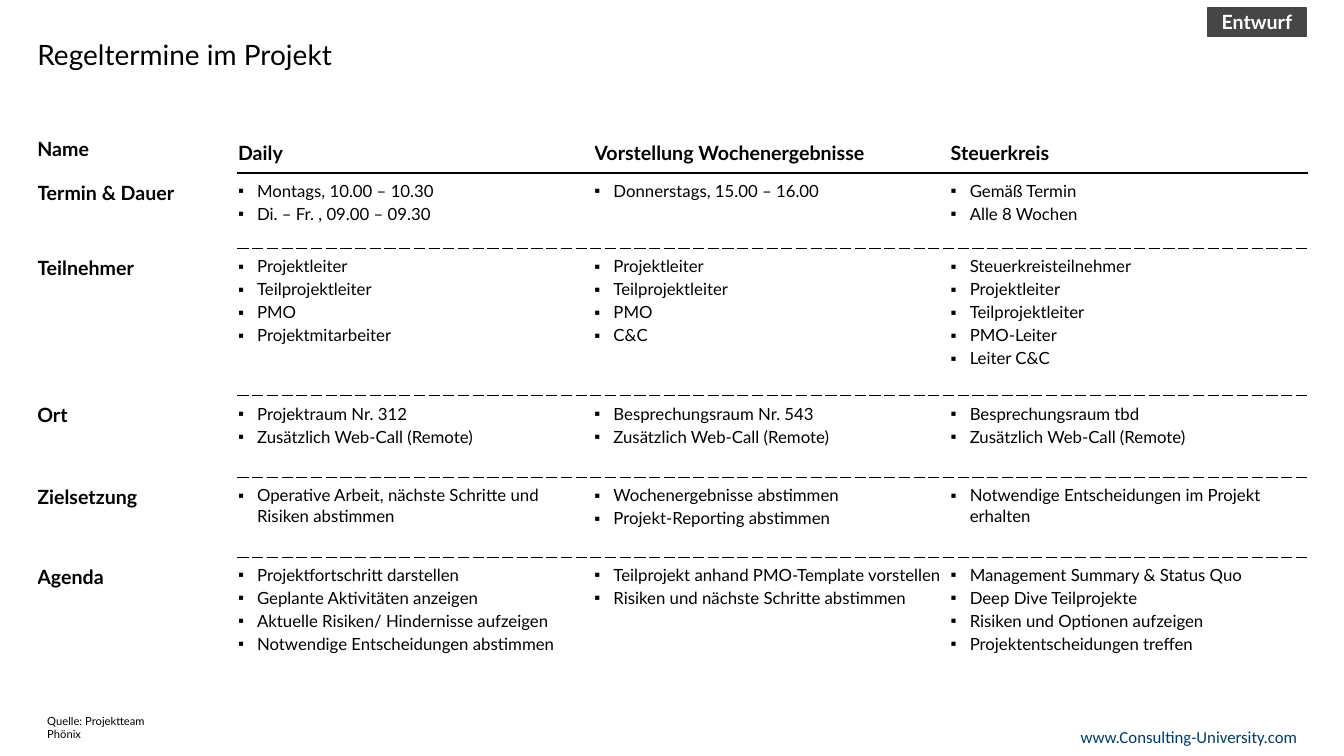
from lxml.etree import SubElement
from pptx import Presentation
from pptx.dml.color import RGBColor
from pptx.enum.shapes import MSO_SHAPE as Shape
from pptx.enum.text import MSO_ANCHOR as Anchor, MSO_AUTO_SIZE as AutoSize, PP_ALIGN as Align
from pptx.oxml import parse_xml
from pptx.oxml.ns import nsdecls, qn
from pptx.util import Cm, Pt

BLACK = RGBColor(0x00, 0x00, 0x00)
WHITE = RGBColor(0xFF, 0xFF, 0xFF)
GREY = RGBColor(0x46, 0x46, 0x46)
NAVY = RGBColor(0x00, 0x3D, 0x66)

HEADING = {"name": "Lato", "size": Pt(14), "bold": True}
BODY = {"name": "Lato", "size": Pt(12), "bold": False}
CELL = {"margin_left": 0, "margin_top": Cm(0.2), "margin_right": Cm(0.15),
        "margin_bottom": Cm(0.1)}
COLUMN_WIDTHS = (5.06, 8.98, 8.98, 8.98)
ROW_HEIGHTS = (1.11, 1.9, 3.71, 2.06, 2.01, 3.51)

MEETINGS = ("Name", "Daily", "Vorstellung Wochenergebnisse", "Steuerkreis")
TOPICS = (
    ("Termin & Dauer",
     ("Montags, 10.00 – 10.30", "Di. – Fr. , 09.00 – 09.30"),
     ("Donnerstags, 15.00 – 16.00",),
     ("Gemäß Termin", "Alle 8 Wochen")),
    ("Teilnehmer",
     ("Projektleiter", "Teilprojektleiter", "PMO", "Projektmitarbeiter"),
     ("Projektleiter", "Teilprojektleiter", "PMO", "C&C"),
     ("Steuerkreisteilnehmer", "Projektleiter", "Teilprojektleiter", "PMO-Leiter",
      "Leiter C&C")),
    ("Ort",
     ("Projektraum Nr. 312", "Zusätzlich Web-Call (Remote)"),
     ("Besprechungsraum Nr. 543", "Zusätzlich Web-Call (Remote)"),
     ("Besprechungsraum tbd", "Zusätzlich Web-Call (Remote)")),
    ("Zielsetzung",
     ("Operative Arbeit, nächste Schritte und Risiken abstimmen",),
     ("Wochenergebnisse abstimmen", "Projekt-Reporting abstimmen"),
     ("Notwendige Entscheidungen im Projekt erhalten",)),
    ("Agenda",
     ("Projektfortschritt darstellen", "Geplante Aktivitäten anzeigen",
      "Aktuelle Risiken/ Hindernisse aufzeigen", "Notwendige Entscheidungen abstimmen"),
     ("Teilprojekt anhand PMO-Template vorstellen",
      "Risiken und nächste Schritte abstimmen"),
     ("Management Summary & Status Quo", "Deep Dive Teilprojekte",
      "Risiken und Optionen aufzeigen", "Projektentscheidungen treffen")),
)


def apply(target, values):
    """Set every attribute named in values on target."""
    for name, value in values.items():
        setattr(target, name, value)


def write(para, text, style, color):
    """Add text to a paragraph in the given style and color."""
    span = para.add_run()
    span.text = text
    apply(span.font, style)
    span.font.color.rgb = color


def place(shape, box):
    """Move a shape to a box of left, top, width and height in centimetres."""
    apply(shape, dict(zip(("left", "top", "width", "height"), map(Cm, box))))


def add_bullet(para):
    """Give a paragraph a hanging square bullet."""
    props = para._p.get_or_add_pPr()
    props.set("marL", str(Cm(0.48)))
    props.set("indent", str(-Cm(0.48)))
    SubElement(props, qn("a:buFont")).set("typeface", "Arial")
    SubElement(props, qn("a:buChar")).set("char", "▪")


def add_borders(cell, top, bottom):
    """Draw top and bottom cell borders, each a pair of color and dash."""
    props = cell._tc.get_or_add_tcPr()
    for position, (tag, (color, dash)) in enumerate((("lnT", top), ("lnB", bottom))):
        props.insert(position, parse_xml(
            f'<a:{tag} {nsdecls("a")} w="{Pt(1)}"><a:solidFill><a:srgbClr val="{color}"/>'
            f'</a:solidFill><a:prstDash val="{dash}"/></a:{tag}>'))


def fill_cell(cell, content, top, bottom):
    """Fill a cell with a heading string or a tuple of bullets."""
    apply(cell, CELL)
    cell.fill.solid()
    cell.fill.fore_color.rgb = WHITE
    add_borders(cell, top, bottom)
    frame = cell.text_frame
    if isinstance(content, str):
        write(frame.paragraphs[0], content, HEADING, BLACK)
        return
    for index, item in enumerate(content):
        para = frame.add_paragraph() if index else frame.paragraphs[0]
        add_bullet(para)
        para.space_before = Pt(2 if index else 0)
        write(para, item, BODY, BLACK)


def add_schedule(page, box):
    """Add the table of regular meetings."""
    rows = (MEETINGS, *TOPICS)
    table = page.shapes.add_table(len(rows), len(MEETINGS), *map(Cm, box)).table
    apply(table, {"first_row": False, "horz_banding": False})
    for column, width in zip(table.columns, COLUMN_WIDTHS):
        column.width = Cm(width)
    for row, height in zip(table.rows, ROW_HEIGHTS):
        row.height = Cm(height)
    blank, solid, dashed = (WHITE, "solid"), (BLACK, "solid"), (BLACK, "sysDash")
    rules = (blank, solid, *[dashed] * (len(rows) - 2), blank)
    for r, contents in enumerate(rows):
        for c, content in enumerate(contents):
            cell = table.cell(r, c)
            top, bottom = (rules[r], rules[r + 1]) if c else (blank, blank)
            fill_cell(cell, content, top, bottom)
            if r == 0 and c:
                cell.vertical_anchor = Anchor.MIDDLE


def add_title(page, box):
    """Place and format the title."""
    title = page.shapes.title
    place(title, box)
    frame = title.text_frame
    apply(frame, {"margin_left": 0, "margin_right": 0, "word_wrap": True,
                  "vertical_anchor": Anchor.TOP, "auto_size": AutoSize.NONE})
    para = frame.paragraphs[0]
    apply(para, {"alignment": Align.LEFT, "line_spacing": 0.9})
    write(para, "Regeltermine im Projekt", {"name": "Lato", "size": Pt(20)}, BLACK)


def add_status(page, box):
    """Add the draft tag."""
    tag = page.shapes.add_shape(Shape.RECTANGLE, *map(Cm, box))
    tag.shadow.inherit = False
    tag.fill.solid()
    tag.fill.fore_color.rgb = GREY
    tag.line.color.rgb = GREY
    tag.line.width = Pt(1)
    apply(tag.text_frame, {"vertical_anchor": Anchor.MIDDLE, "word_wrap": True})
    para = tag.text_frame.paragraphs[0]
    para.alignment = Align.CENTER
    write(para, "Entwurf", HEADING, WHITE)


def add_note(page, box, text, style, color, layout, alignment):
    """Add a line of footer text."""
    frame = page.shapes.add_textbox(*map(Cm, box)).text_frame
    apply(frame, layout)
    para = frame.paragraphs[0]
    para.alignment = alignment
    write(para, text, style, color)


def main():
    """Build the slide and save it."""
    deck = Presentation()
    apply(deck, {"slide_width": Cm(33.87), "slide_height": Cm(19.05)})
    page = deck.slides.add_slide(deck.slide_layouts[5])
    add_note(page, (24.31, 18.19, 8.64, 0.76), "www.Consulting-University.com",
             {"name": "Calibri", "size": Pt(12)}, NAVY,
             {"word_wrap": False, "vertical_anchor": Anchor.MIDDLE}, Align.RIGHT)
    add_title(page, (0.94, 0.91, 32, 1.5))
    add_schedule(page, (0.94, 3.25, 32, 14.3))
    add_status(page, (30.43, 0.2, 2.49, 0.71))
    add_note(page, (0.94, 18.19, 3.84, 0.61), "Quelle: Projektteam Phönix",
             {"name": "Lato", "size": Pt(8)}, BLACK,
             {"word_wrap": True, "vertical_anchor": Anchor.BOTTOM}, Align.LEFT)
    deck.save("out.pptx")


if __name__ == "__main__":
    main()
